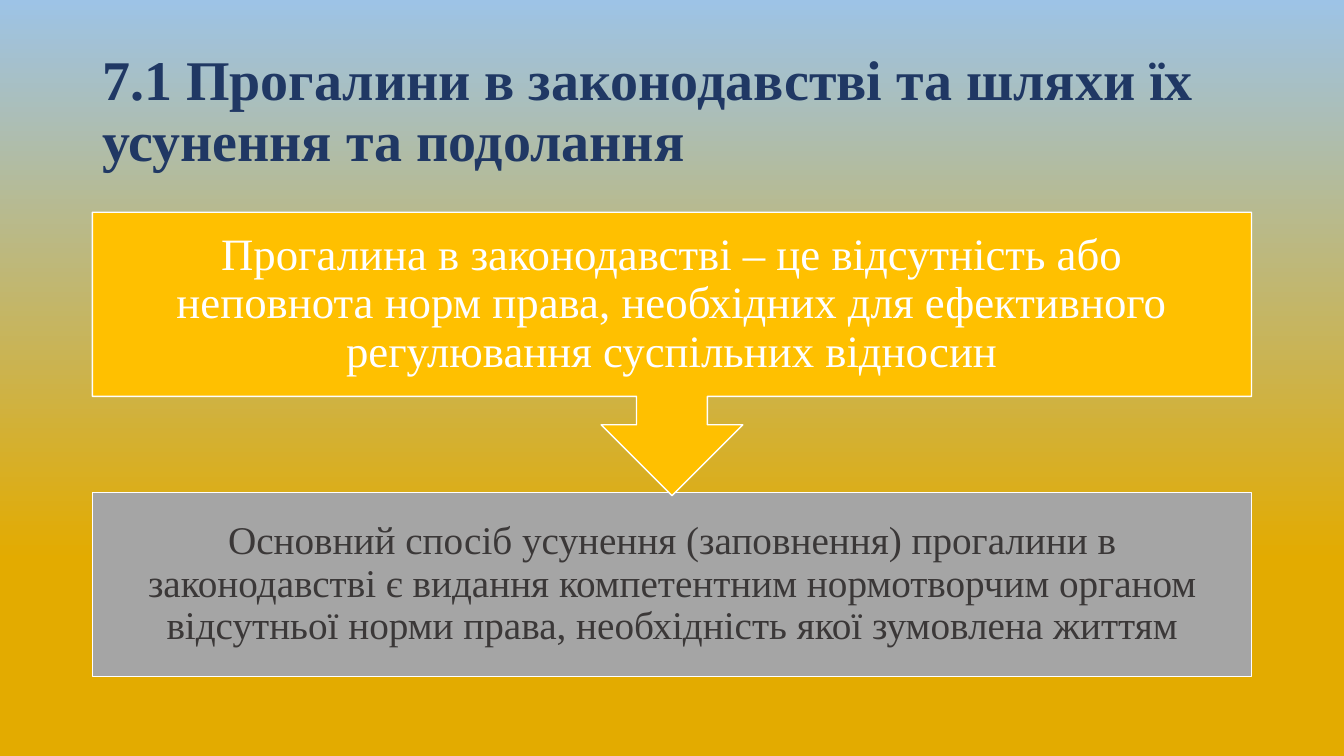
from pptx import Presentation
from pptx.dml.color import RGBColor
from pptx.enum.shapes import MSO_SHAPE as Preset
from pptx.enum.text import MSO_ANCHOR as Anchor, PP_ALIGN as Align
from pptx.util import Cm, Pt

SLIDE_SIZE = (33.87, 19.05)
LEFT, WIDTH = 2.33, 29.21
BACKGROUND = [(0.26, "E3AB00"), (1, "9DC3E6")]
TITLE = {
    "text": "7.1 Прогалини в законодавстві та шляхи їх усунення та подолання",
    "top": 1.01, "height": 3.68, "inset": 0.25, "align": Align.LEFT,
    "font": {"size": Pt(40), "bold": True}, "color": "203864",
}
BLOCKS = [
    {
        "text": "Основний спосіб усунення (заповнення) прогалини в законодавстві "
                "є видання компетентним нормотворчим органом відсутньої норми права, "
                "необхідність якої зумовлена життям",
        "preset": Preset.RECTANGLE, "fill": "A5A5A5",
        "top": 12.41, "height": 4.64, "inset": 0.55, "align": Align.CENTER,
        "font": {"size": Pt(28), "bold": False}, "color": "3B3838",
    },
    {
        "text": "Прогалина в законодавстві – це відсутність або неповнота норм права, "
                "необхідних для ефективного регулювання суспільних відносин",
        "preset": Preset.DOWN_ARROW_CALLOUT, "fill": "FFC000",
        "top": 5.35, "height": 7.14, "inset": 0.63, "align": Align.CENTER,
        "font": {"size": Pt(32), "bold": False}, "color": "FFFFFF",
    },
]


def set_color(color_format, value):
    color_format.rgb = RGBColor.from_string(value)


def set_attributes(target, values):
    for name, value in values.items():
        setattr(target, name, value)


def frame_of(item):
    return [Cm(value) for value in (LEFT, item["top"], WIDTH, item["height"])]


def write_text(shape, item):
    frame = shape.text_frame
    sides = ("left", "top", "right", "bottom")
    set_attributes(frame, {f"margin_{side}": Cm(item["inset"]) for side in sides})
    set_attributes(frame, {"word_wrap": True, "vertical_anchor": Anchor.MIDDLE})
    paragraph = frame.paragraphs[0]
    set_attributes(paragraph, {"alignment": item["align"], "line_spacing": 0.9})
    run = paragraph.add_run()
    run.text = item["text"]
    set_attributes(run.font, {"name": "Times New Roman", **item["font"]})
    set_color(run.font.color, item["color"])


def paint_background(slide):
    fill = slide.background.fill
    fill.gradient()
    fill.gradient_angle = 90
    for stop, (position, color) in zip(fill.gradient_stops, BACKGROUND):
        stop.position = position
        set_color(stop.color, color)


def add_block(slide, block):
    shape = slide.shapes.add_shape(block["preset"], *frame_of(block))
    shape.shadow.inherit = False
    shape.fill.solid()
    set_color(shape.fill.fore_color, block["fill"])
    set_color(shape.line.color, "FFFFFF")
    shape.line.width = Pt(1)
    write_text(shape, block)


def main():
    presentation = Presentation()
    presentation.slide_width, presentation.slide_height = map(Cm, SLIDE_SIZE)
    slide = presentation.slides.add_slide(presentation.slide_layouts[6])
    paint_background(slide)
    write_text(slide.shapes.add_textbox(*frame_of(TITLE)), TITLE)
    for block in BLOCKS:
        add_block(slide, block)
    presentation.save("out.pptx")


if __name__ == "__main__":
    main()
